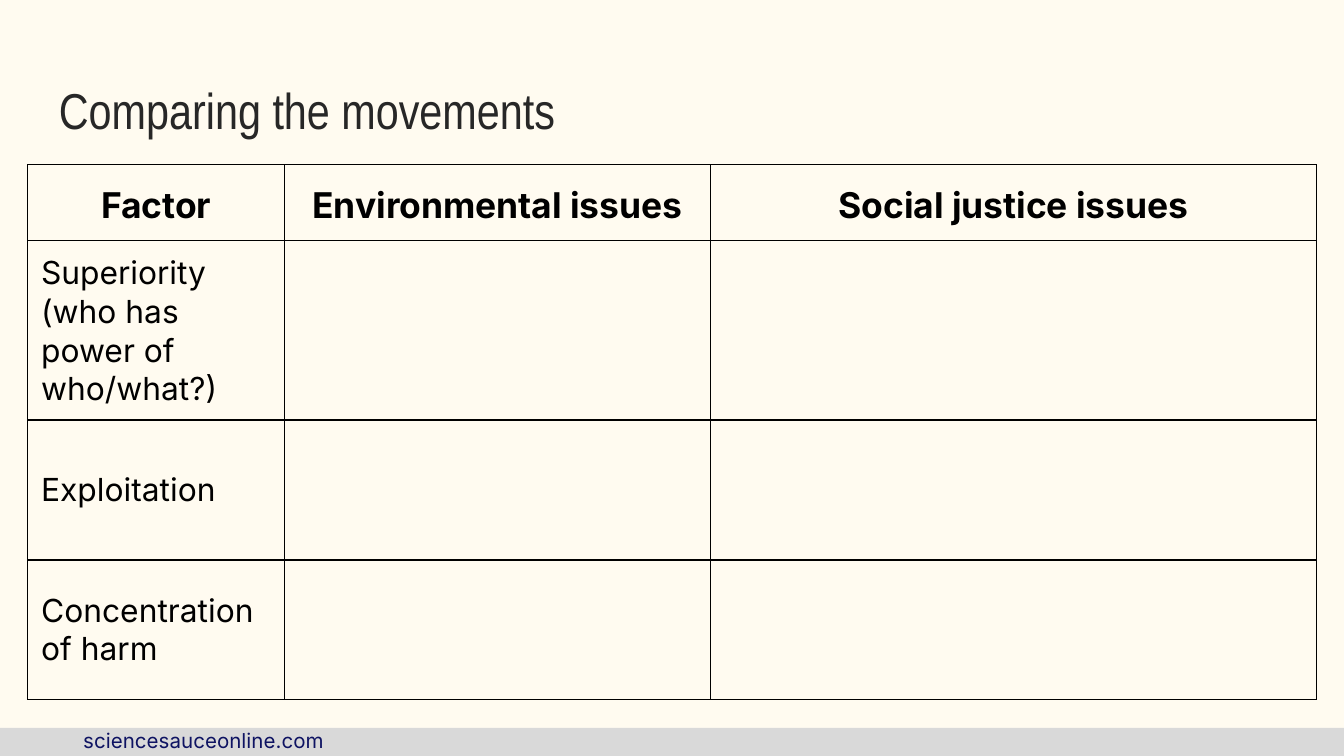
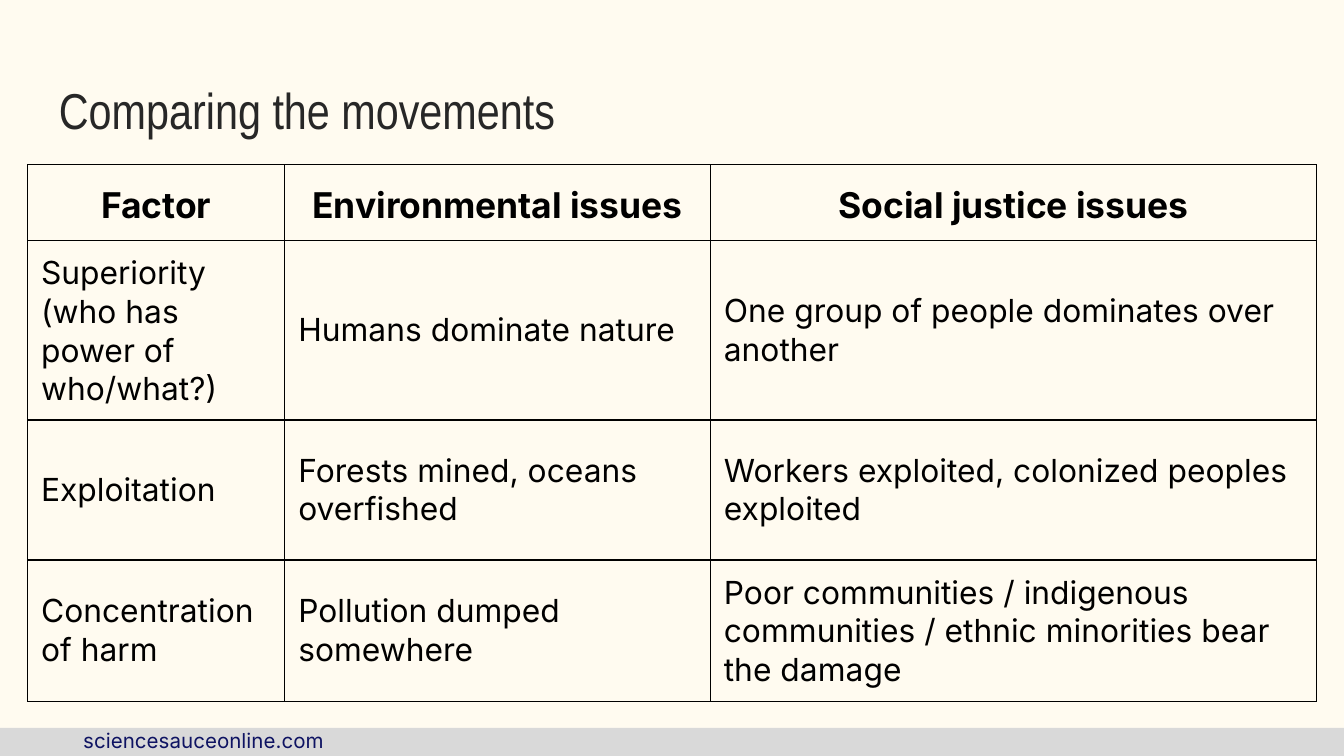
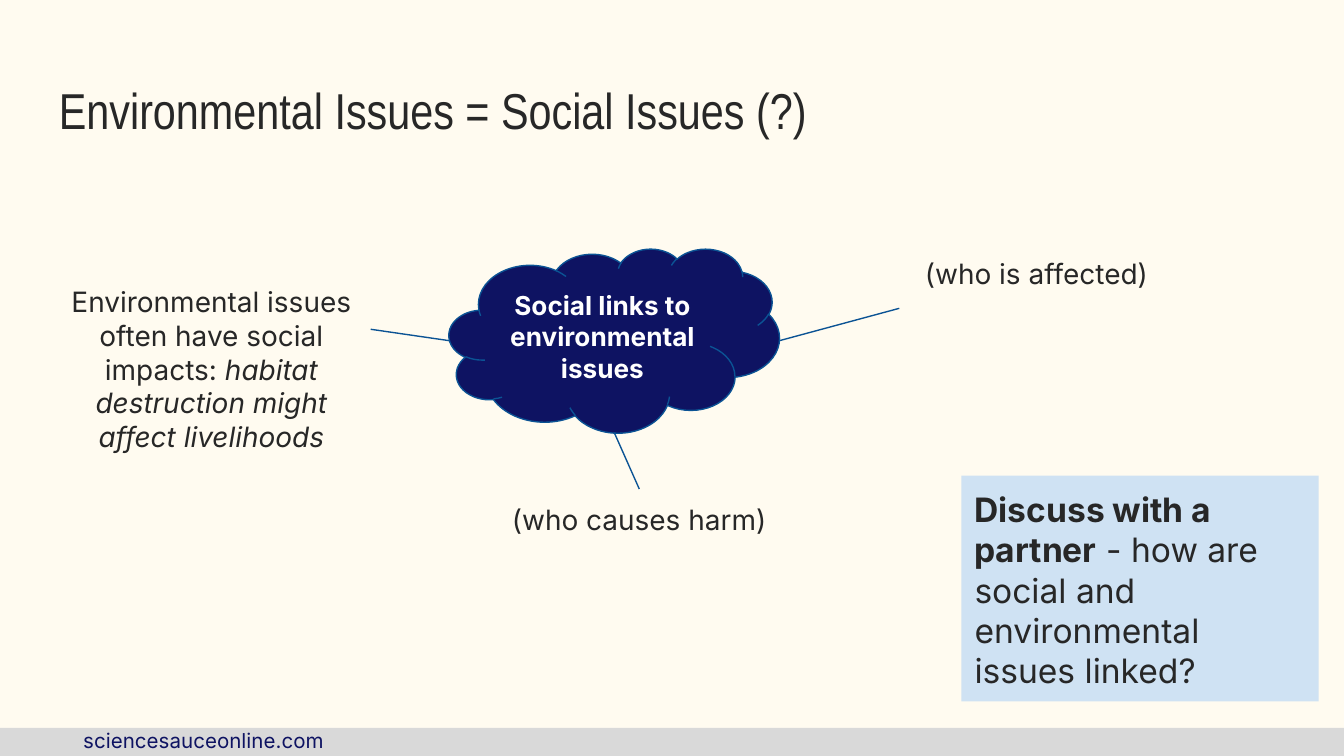
from dataclasses import dataclass
from typing import Sequence

import lxml.etree
import pptx
import pptx.dml.color
import pptx.enum.shapes
import pptx.enum.text
import pptx.oxml
import pptx.oxml.ns
import pptx.util

Pt = pptx.util.Pt
Align = pptx.enum.text.PP_ALIGN
Anchor = pptx.enum.text.MSO_ANCHOR
Shape = pptx.enum.shapes.MSO_SHAPE

# Shared style
CREAM, GREY, NAVY, INK = "FFFBF0", "D9D9D9", "0E1362", "272727"
BLACK, WHITE, LINE_BLUE, PALE_BLUE = "000000", "FFFFFF", "0B5394", "CFE2F3"
BODY_FONT, TITLE_FONT = "Inter", "Arial Narrow"
INSET, LINE_WIDTH = 7.2, 0.75
SLIDE_WIDTH, SLIDE_HEIGHT = 720, 405


@dataclass(frozen=True)
class Box:
    left: float
    top: float
    width: float
    height: float

    def lengths(self) -> list:
        return [Pt(value) for value in (self.left, self.top, self.width, self.height)]

    def side_middle(self, side: int) -> tuple[float, float]:
        """Middle of a side: 0 top, 1 left, 2 bottom, 3 right."""
        center_x, center_y = self.left + self.width / 2, self.top + self.height / 2
        return (
            (center_x, self.top),
            (self.left, center_y),
            (center_x, self.top + self.height),
            (self.left + self.width, center_y),
        )[side]


@dataclass(frozen=True)
class Run:
    text: str
    bold: bool = False
    italic: bool = False


@dataclass(frozen=True)
class TextStyle:
    size: float
    color: str = INK
    font: str = BODY_FONT
    align: Align = Align.LEFT
    anchor: Anchor = Anchor.TOP
    line_spacing: float = 1.0


@dataclass(frozen=True)
class Branch:
    box: Box
    runs: tuple[Run, ...]
    cloud_side: int
    text_side: int


TITLE_STYLE = TextStyle(27, font=TITLE_FONT)
FOOTER_STYLE = TextStyle(11, NAVY)
HEADER_STYLE = TextStyle(19, BLACK, align=Align.CENTER, line_spacing=1.15)
CELL_STYLE = TextStyle(17, BLACK)
CLOUD_STYLE = TextStyle(14, WHITE, align=Align.CENTER, anchor=Anchor.MIDDLE)
BRANCH_STYLE = TextStyle(15, align=Align.CENTER)
TASK_STYLE = TextStyle(18)

TITLE_BOX = Box(24.5, 35.3, 671, 48.2)
BAND_BOX = Box(0, 390, SLIDE_WIDTH, 15)
FOOTER_BOX = Box(37.5, 383.5, 240, 13)

# Comparison table
TABLE_LEFT, TABLE_TOP = 14.8, 88.3
COLUMN_WIDTHS = (137.8, 228, 324.8)
ROW_HEIGHTS = (16, 75, 75, 75)
HEADINGS = ("Factor", "Environmental issues", "Social justice issues")
FACTORS = (
    "Superiority (who has power of who/what?)",
    "Exploitation",
    "Concentration of harm",
)
ANSWERS = (
    ("Humans dominate nature", "One group of people dominates over another"),
    ("Forests mined, oceans overfished", "Workers exploited, colonized peoples exploited"),
    (
        "Pollution dumped somewhere",
        "Poor communities / indigenous communities / ethnic minorities bear the damage",
    ),
)

# Mind map
CLOUD_BOX = Box(240.6, 133.2, 177, 98.6)
TASK_BOX = Box(515, 254.8, 191.5, 121)
BRANCHES = (
    Branch(Box(481.8, 130.2, 147, 70), (Run("(who is affected)"),), 3, 1),
    Branch(Box(257.2, 262, 170.6, 89.2), (Run("(who causes harm)"),), 2, 0),
    Branch(
        Box(28, 145.4, 170.6, 62),
        (
            Run("Environmental issues often have social impacts: "),
            Run("habitat destruction might affect livelihoods", italic=True),
        ),
        1,
        3,
    ),
)


def rgb(color: str) -> pptx.dml.color.RGBColor:
    return pptx.dml.color.RGBColor.from_string(color)


def write(text_frame, runs: Sequence[Run], style: TextStyle) -> None:
    paragraph = text_frame.paragraphs[0]
    paragraph.alignment = style.align
    paragraph.line_spacing = style.line_spacing
    for item in runs:
        run = paragraph.add_run()
        run.text = item.text
        font = run.font
        font.name, font.size = style.font, Pt(style.size)
        font.bold, font.italic = item.bold, item.italic
        font.color.rgb = rgb(style.color)


def fill_frame(shape, runs: Sequence[Run], style: TextStyle) -> None:
    frame = shape.text_frame
    frame.word_wrap = True
    frame.vertical_anchor = style.anchor
    frame.margin_left = frame.margin_right = Pt(INSET)
    frame.margin_top = frame.margin_bottom = Pt(INSET)
    write(frame, runs, style)


def add_text(slide, box: Box, runs: Sequence[Run], style: TextStyle):
    shape = slide.shapes.add_textbox(*box.lengths())
    fill_frame(shape, runs, style)
    return shape


def add_filled(slide, kind: Shape, box: Box, fill: str, line: str | None = None):
    shape = slide.shapes.add_shape(kind, *box.lengths())
    shape.shadow.inherit = False
    shape.fill.solid()
    shape.fill.fore_color.rgb = rgb(fill)
    if line:
        shape.line.color.rgb = rgb(line)
        shape.line.width = Pt(LINE_WIDTH)
    else:
        shape.line.fill.background()
    return shape


def add_slide(presentation, title: str):
    slide = presentation.slides.add_slide(presentation.slide_layouts[6])
    slide.background.fill.solid()
    slide.background.fill.fore_color.rgb = rgb(CREAM)
    add_filled(slide, Shape.RECTANGLE, BAND_BOX, GREY)
    add_text(slide, FOOTER_BOX, [Run("sciencesauceonline.com")], FOOTER_STYLE)
    add_text(slide, TITLE_BOX, [Run(title)], TITLE_STYLE)
    return slide


def set_borders(cell) -> None:
    properties = cell._tc.get_or_add_tcPr()
    namespace = pptx.oxml.ns.nsdecls("a")
    for position, side in enumerate("LRTB"):
        border = pptx.oxml.parse_xml(
            f'<a:ln{side} {namespace} w="{Pt(LINE_WIDTH)}"><a:solidFill>'
            f'<a:srgbClr val="{BLACK}"/></a:solidFill></a:ln{side}>'
        )
        properties.insert(position, border)


def add_comparison(presentation, answers: Sequence[Sequence[str]]) -> None:
    slide = add_slide(presentation, "Comparing the movements")
    box = Box(TABLE_LEFT, TABLE_TOP, sum(COLUMN_WIDTHS), sum(ROW_HEIGHTS))
    table = slide.shapes.add_table(
        len(ROW_HEIGHTS), len(COLUMN_WIDTHS), *box.lengths()
    ).table
    table.first_row = table.horz_banding = False
    for column, width in zip(table.columns, COLUMN_WIDTHS):
        column.width = Pt(width)
    for row, height in zip(table.rows, ROW_HEIGHTS):
        row.height = Pt(height)

    rows = [HEADINGS] + [(factor, *pair) for factor, pair in zip(FACTORS, answers)]
    for row_index, texts in enumerate(rows):
        is_header = row_index == 0
        for column_index, text in enumerate(texts):
            cell = table.cell(row_index, column_index)
            cell.fill.background()
            cell.vertical_anchor = Anchor.MIDDLE
            cell.margin_left = cell.margin_right = Pt(INSET)
            cell.margin_top = cell.margin_bottom = Pt(INSET)
            set_borders(cell)
            if text:
                style = HEADER_STYLE if is_header else CELL_STYLE
                write(cell.text_frame, [Run(text, bold=is_header)], style)


def add_branch(slide, branch: Branch) -> None:
    label = add_text(slide, branch.box, branch.runs, BRANCH_STYLE)
    start = CLOUD_BOX.side_middle(branch.cloud_side)
    end = branch.box.side_middle(branch.text_side)
    connector = slide.shapes.add_connector(
        pptx.enum.shapes.MSO_CONNECTOR.STRAIGHT, *(Pt(value) for value in start + end)
    )
    connector.end_connect(label, branch.text_side)
    connector.line.color.rgb = rgb(LINE_BLUE)
    connector.line.width = Pt(LINE_WIDTH)
    lxml.etree.SubElement(
        connector._element.spPr, pptx.oxml.ns.qn("a:effectLst")
    )


def add_mind_map(presentation) -> None:
    slide = add_slide(presentation, "Environmental Issues = Social Issues (?)")
    cloud = add_filled(slide, Shape.CLOUD, CLOUD_BOX, NAVY, LINE_BLUE)
    fill_frame(cloud, [Run("Social links to environmental issues", bold=True)], CLOUD_STYLE)
    for branch in BRANCHES:
        add_branch(slide, branch)

    # Discussion task
    task = add_filled(slide, Shape.RECTANGLE, TASK_BOX, PALE_BLUE)
    task_runs = [
        Run("Discuss with a partner", bold=True),
        Run(" - how are social and environmental issues linked?"),
    ]
    fill_frame(task, task_runs, TASK_STYLE)


def main() -> None:
    presentation = pptx.Presentation()
    presentation.slide_width = Pt(SLIDE_WIDTH)
    presentation.slide_height = Pt(SLIDE_HEIGHT)
    add_comparison(presentation, [("", "")] * len(FACTORS))
    add_comparison(presentation, ANSWERS)
    add_mind_map(presentation)
    presentation.save("out.pptx")


if __name__ == "__main__":
    main()
